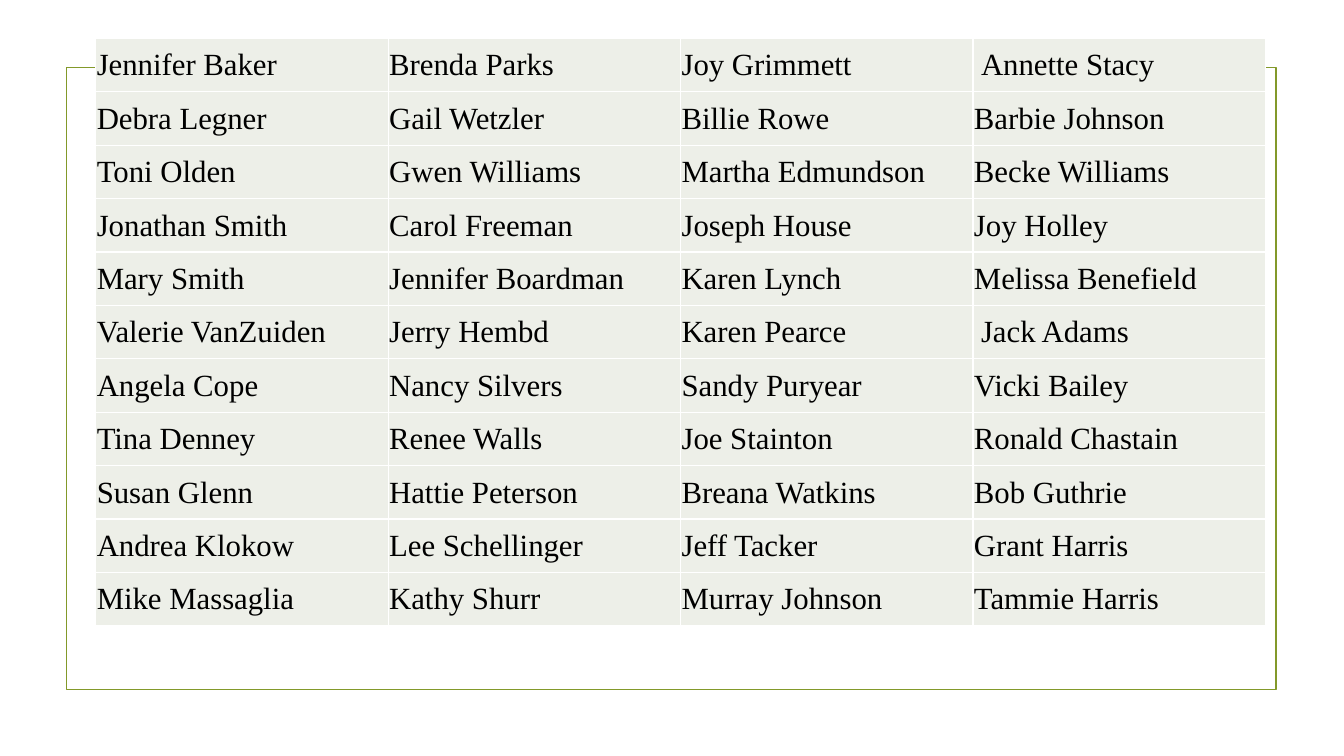
from lxml.etree import SubElement
from pptx import Presentation
from pptx.dml.color import RGBColor
from pptx.enum.shapes import MSO_SHAPE as Preset
from pptx.enum.text import MSO_ANCHOR as Anchor
from pptx.oxml.ns import qn
from pptx.util import Inches, Pt

COLORS = {"frame": "83992A", "cell": "EDEFE8", "border": "FFFFFF", "text": "000000"}
FONT = "Times New Roman"

NAMES = [
    ["Jennifer Baker", "Brenda Parks", "Joy Grimmett", "Annette Stacy"],
    ["Debra Legner", "Gail Wetzler", "Billie Rowe", "Barbie Johnson"],
    ["Toni Olden", "Gwen Williams", "Martha Edmundson", "Becke Williams"],
    ["Jonathan Smith", "Carol Freeman", "Joseph House", "Joy Holley"],
    ["Mary Smith", "Jennifer Boardman", "Karen Lynch", "Melissa Benefield"],
    ["Valerie VanZuiden", "Jerry Hembd", "Karen Pearce", "Jack Adams"],
    ["Angela Cope", "Nancy Silvers", "Sandy Puryear", "Vicki Bailey"],
    ["Tina Denney", "Renee Walls", "Joe Stainton", "Ronald Chastain"],
    ["Susan Glenn", "Hattie Peterson", "Breana Watkins", "Bob Guthrie"],
    ["Andrea Klokow", "Lee Schellinger", "Jeff Tacker", "Grant Harris"],
    ["Mike Massaglia", "Kathy Shurr", "Murray Johnson", "Tammie Harris"],
]
INDENTED = {"Annette Stacy", "Jack Adams"}


def color(name):
    return RGBColor.from_string(COLORS[name])


def add_frame(page, left, top, width, height):
    frame = page.shapes.add_shape(
        Preset.RECTANGLE, Inches(left), Inches(top), Inches(width), Inches(height))
    frame.shadow.inherit = False
    frame.fill.background()
    frame.line.color.rgb = color("frame")
    frame.line.width = Pt(1.25)


def add_borders(cell):
    properties = cell._tc.get_or_add_tcPr()
    for side in ("lnL", "lnR", "lnT", "lnB"):
        line = SubElement(properties, qn(f"a:{side}"), w=str(Pt(1)))
        fill = SubElement(line, qn("a:solidFill"))
        SubElement(fill, qn("a:srgbClr"), val=COLORS["border"])


def format_cell(cell, name):
    cell.text = name
    cell.vertical_anchor = Anchor.MIDDLE
    cell.margin_left = Inches(0.08 if name in INDENTED else 0.01)
    cell.margin_right = cell.margin_top = Inches(0.01)
    cell.margin_bottom = 0
    # Borders precede the fill in the cell properties
    add_borders(cell)
    cell.fill.solid()
    cell.fill.fore_color.rgb = color("cell")
    font = cell.text_frame.paragraphs[0].font
    font.name = FONT
    font.size = Pt(22)
    font.color.rgb = color("text")


def add_name_table(page, left, top, width, row_height):
    rows, columns = len(NAMES), len(NAMES[0])
    table = page.shapes.add_table(
        rows, columns, Inches(left), Inches(top),
        Inches(width), Inches(row_height * rows)).table
    table.first_row = False
    table.horz_banding = False
    for row, names in enumerate(NAMES):
        for column, name in enumerate(names):
            format_cell(table.cell(row, column), name)


def main():
    deck = Presentation()
    deck.slide_width, deck.slide_height = Inches(13.33), Inches(7.5)
    page = deck.slides.add_slide(deck.slide_layouts[6])
    # Frame behind the list of names
    add_frame(page, 0.66, 0.67, 12, 6.17)
    add_name_table(page, 0.95, 0.38, 11.6, 0.53)
    deck.save("out.pptx")


if __name__ == "__main__":
    main()
